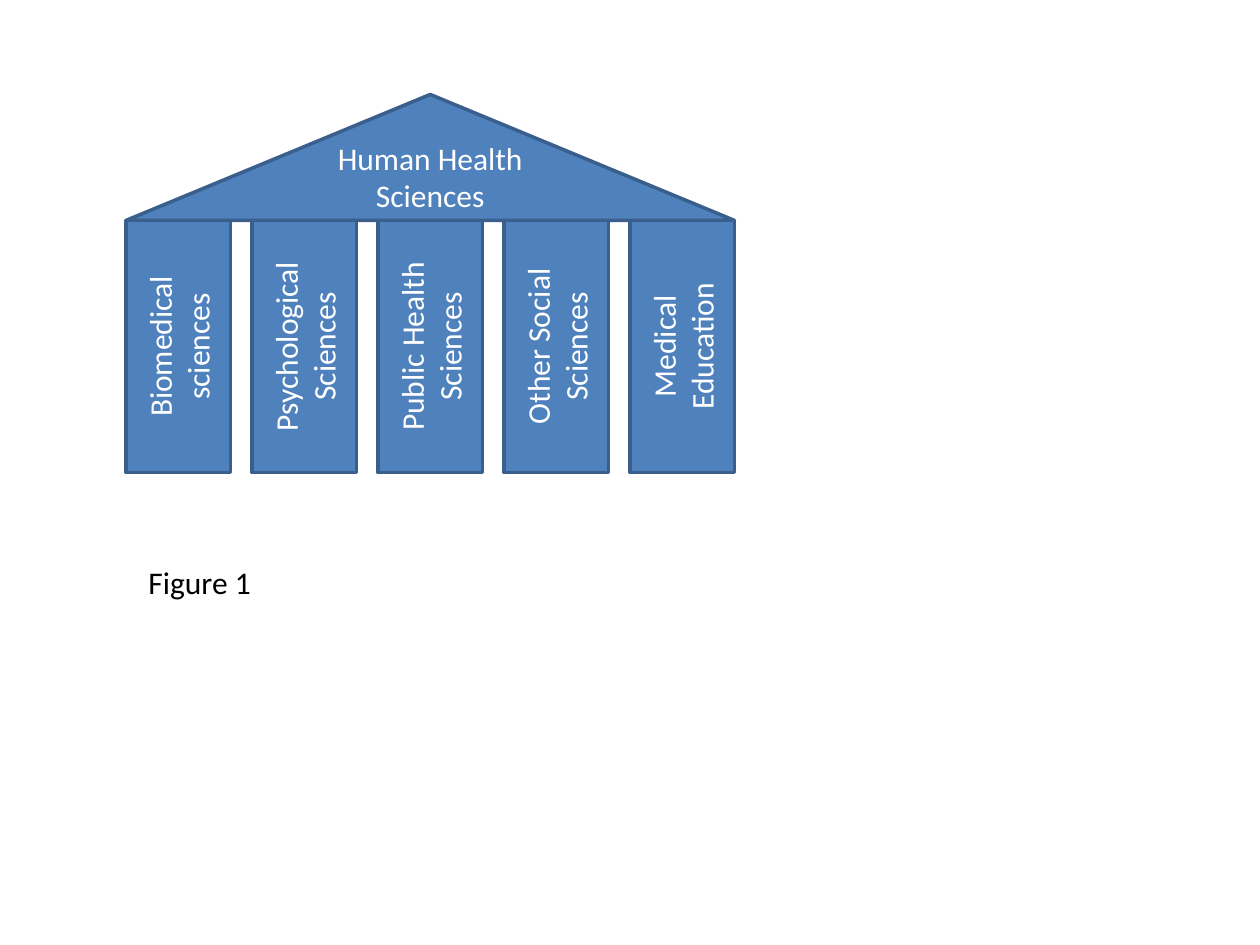
from pptx import Presentation
from pptx.dml.color import RGBColor
from pptx.enum.shapes import MSO_SHAPE as Shape
from pptx.enum.text import MSO_ANCHOR as Anchor, MSO_AUTO_SIZE as AutoSize, PP_ALIGN as Align
from pptx.util import Inches, Pt

PILLARS = [
    "Biomedical sciences",
    "Psychological Sciences",
    "Public Health Sciences",
    "Other Social Sciences",
    "Medical\nEducation",
]
ROOF_HEIGHT = 1
PILLAR_WIDTH = 0.83


def color(hex_code):
    return RGBColor.from_string(hex_code)


def write(frame, text, hex_code, align):
    frame.text = text
    for paragraph in frame.paragraphs:
        paragraph.alignment = align
        paragraph.font.name = "Calibri"
        paragraph.font.size = Pt(18)
        paragraph.font.color.rgb = color(hex_code)


def add_block(slide, preset, text, left, top, width, height, anchor):
    block = slide.shapes.add_shape(
        preset, Inches(left), Inches(top), Inches(width), Inches(height))
    block.shadow.inherit = False
    block.fill.solid()
    block.fill.fore_color.rgb = color("4F81BD")
    block.line.color.rgb = color("3A5F8C")
    block.line.width = Pt(2)
    block.text_frame.word_wrap = True
    block.text_frame.vertical_anchor = anchor
    write(block.text_frame, text, "FFFFFF", Align.CENTER)
    return block


def add_temple(slide, left, top, width, height):
    add_block(slide, Shape.ISOSCELES_TRIANGLE, "Human Health Sciences",
              left, top, width, ROOF_HEIGHT, Anchor.BOTTOM)
    pitch = (width - PILLAR_WIDTH) / (len(PILLARS) - 1)
    for index, field in enumerate(PILLARS):
        pillar = add_block(slide, Shape.RECTANGLE, field, left + index * pitch,
                           top + ROOF_HEIGHT, PILLAR_WIDTH, height - ROOF_HEIGHT,
                           Anchor.MIDDLE)
        pillar.text_frame._txBody.bodyPr.set("vert", "vert270")


def add_caption(slide, left, top, width, height):
    caption = slide.shapes.add_textbox(
        Inches(left), Inches(top), Inches(width), Inches(height)).text_frame
    caption.word_wrap = False
    caption.auto_size = AutoSize.SHAPE_TO_FIT_TEXT
    write(caption, "Figure 1", "000000", Align.LEFT)


def main():
    deck = Presentation()
    deck.slide_width, deck.slide_height = Inches(10), Inches(7.5)
    slide = deck.slides.add_slide(deck.slide_layouts[6])
    add_temple(slide, 1, 0.75, 4.83, 3)
    add_caption(slide, 1.08, 4.42, 1.02, 0.4)
    deck.save("out.pptx")


if __name__ == "__main__":
    main()
